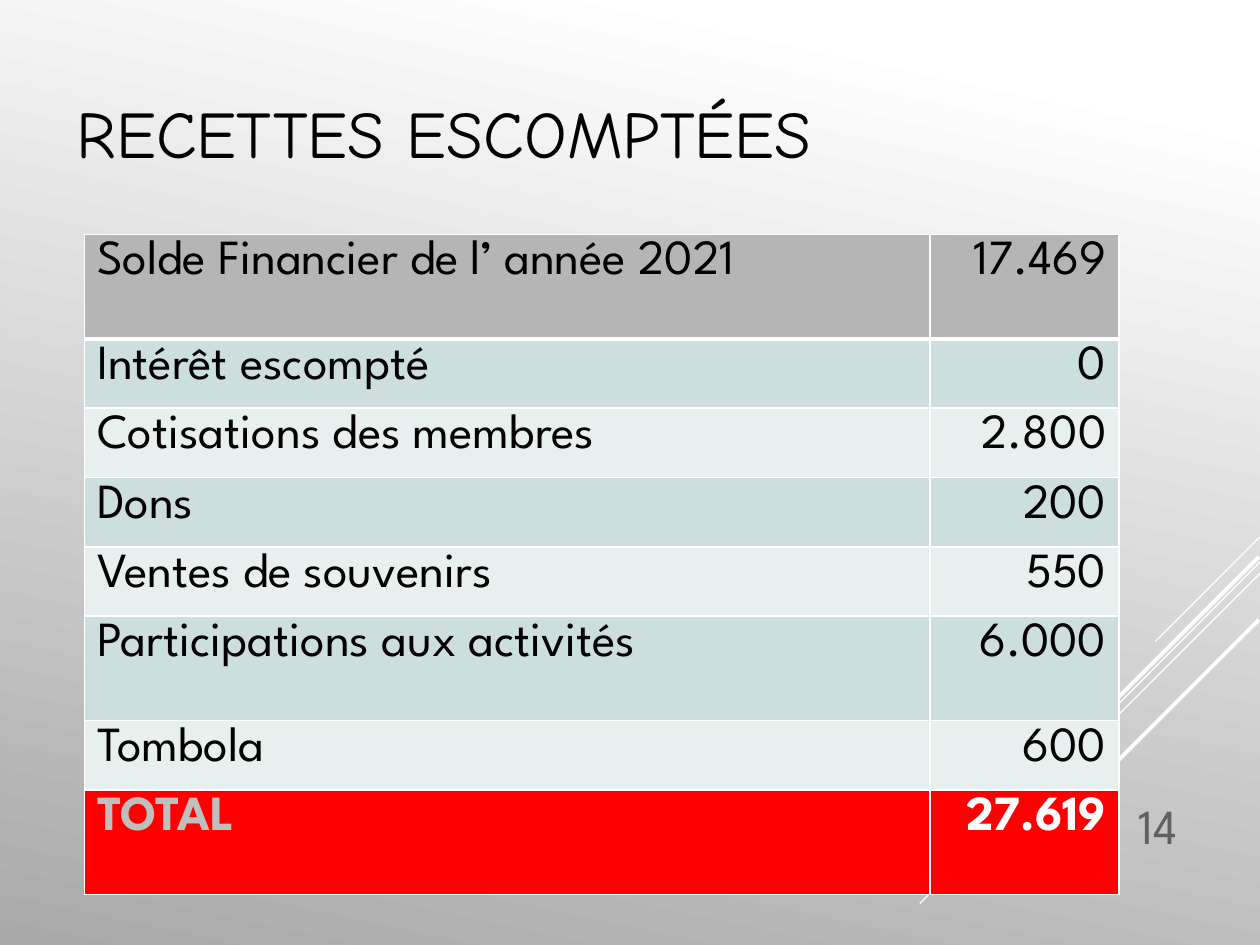
from lxml import etree
from pptx import Presentation
from pptx.dml.color import RGBColor
from pptx.enum.shapes import MSO_CONNECTOR
from pptx.enum.text import MSO_ANCHOR, PP_ALIGN
from pptx.oxml.ns import qn
from pptx.util import Inches, Pt

LINE = MSO_CONNECTOR.STRAIGHT
MIDDLE, BOTTOM = MSO_ANCHOR.MIDDLE, MSO_ANCHOR.BOTTOM
LEFT, RIGHT = PP_ALIGN.LEFT, PP_ALIGN.RIGHT

WHITE = RGBColor(0xFF, 0xFF, 0xFF)
BLACK = RGBColor(0x00, 0x00, 0x00)
SHADE = RGBColor(0xA9, 0xA9, 0xA9)
GREY = RGBColor(0x60, 0x60, 0x60)
SILVER = RGBColor(0xBF, 0xBF, 0xBF)
HEAD = RGBColor(0xB5, 0xB5, 0xB5)
DARK = RGBColor(0xCC, 0xDE, 0xDE)
LIGHT = RGBColor(0xE7, 0xEF, 0xEF)
RED = RGBColor(0xFF, 0x00, 0x00)

TITLE_FONT = "Comic Neue"
BODY_FONT = "League Spartan"

RAYS = [
    (10, 4.26, 9.17, 5.09, 0.75),
    (10, 4.46, 7.3, 7.17, 0.75),
    (10, 4.55, 8.28, 6.27, 0.75),
    (9.99, 4.42, 8.42, 5.99, 2.25),
    (9.99, 4.92, 8.85, 6.06, 2.25),
]
ROWS = [
    ("Solde Financier de l’ année 2021", "17.469"),
    ("Intérêt escompté", "0"),
    ("Cotisations des membres", "2.800"),
    ("Dons", "200"),
    ("Ventes de souvenirs", "550"),
    ("Participations aux activités", "6.000"),
    ("Tombola", "600"),
    ("TOTAL", "27.619"),
]
WIDTHS = [6.71, 1.5]
TALL, SHORT = 0.83, 0.55
TALL_ROWS = (0, 5, 7)


def style(para, font, size, color, align=LEFT, bold=False):
    """Format the paragraph and its runs."""
    para.alignment = align
    for run in para.runs:
        run.font.name = font
        run.font.size = Pt(size)
        run.font.bold = bold
        run.font.color.rgb = color


def add_back(slide):
    """Fill the background with a white to grey gradient."""
    fill = slide.background.fill
    fill.gradient()
    fill.gradient_angle = 258
    for stop, place, color in zip(fill.gradient_stops, (0.1, 1), (WHITE, SHADE)):
        stop.position = place
        stop.color.rgb = color


def add_rays(slide):
    """Draw the slanted white lines in the corner."""
    for x1, y1, x2, y2, width in RAYS:
        ray = slide.shapes.add_connector(
            LINE, Inches(x1), Inches(y1), Inches(x2), Inches(y2))
        ray.line.color.rgb = WHITE
        ray.line.width = Pt(width)
        etree.SubElement(ray._element.spPr, qn("a:effectLst"))


def add_title(slide, left, top, width, height):
    """Place and format the title."""
    title = slide.shapes.title
    title.left, title.top = Inches(left), Inches(top)
    title.width, title.height = Inches(width), Inches(height)
    frame = title.text_frame
    frame.text = "RECETTES ESCOMPTÉES"
    frame.vertical_anchor = MIDDLE
    style(frame.paragraphs[0], TITLE_FONT, 38, BLACK)


def add_edges(cell, low):
    """Draw white cell borders, with the given width at the bottom."""
    props = cell._tc.get_or_add_tcPr()
    for spot, (side, width) in enumerate(
            [("L", 1), ("R", 1), ("T", 1), ("B", low)]):
        edge = etree.Element(qn(f"a:ln{side}"), w=str(Pt(width)))
        fill = etree.SubElement(edge, qn("a:solidFill"))
        etree.SubElement(fill, qn("a:srgbClr"), val=str(WHITE))
        props.insert(spot, edge)


def add_sums(slide, left, top):
    """Build the table of expected income."""
    heights = [TALL if i in TALL_ROWS else SHORT for i in range(len(ROWS))]
    table = slide.shapes.add_table(
        len(ROWS), len(WIDTHS), Inches(left), Inches(top),
        Inches(sum(WIDTHS)), Inches(sum(heights))).table
    for col, width in zip(table.columns, WIDTHS):
        col.width = Inches(width)
    last = len(ROWS) - 1
    fills = [HEAD] + [DARK if i % 2 else LIGHT for i in range(1, last)] + [RED]
    for i, texts in enumerate(ROWS):
        table.rows[i].height = Inches(heights[i])
        total = i == last
        inks = (SILVER, WHITE) if total else (BLACK, BLACK)
        for j, (text, ink, align) in enumerate(zip(texts, inks, (LEFT, RIGHT))):
            cell = table.cell(i, j)
            cell.text_frame.text = text
            style(cell.text_frame.paragraphs[0], BODY_FONT, 28, ink, align, total)
            cell.fill.solid()
            cell.fill.fore_color.rgb = fills[i]
            add_edges(cell, 3 if i == 0 else 1)


def add_number(slide, left, top, width, height):
    """Place the page number."""
    box = slide.shapes.add_textbox(
        Inches(left), Inches(top), Inches(width), Inches(height))
    frame = box.text_frame
    frame.word_wrap = True
    frame.vertical_anchor = BOTTOM
    frame.text = "14"
    style(frame.paragraphs[0], BODY_FONT, 28, GREY, RIGHT)


def main():
    """Build and save the slide."""
    deck = Presentation()
    deck.slide_width, deck.slide_height = Inches(10), Inches(7.5)
    slide = deck.slides.add_slide(deck.slide_layouts[5])
    add_back(slide)
    add_rays(slide)
    add_title(slide, 0.51, 0.21, 7.17, 1.67)
    add_sums(slide, 0.67, 1.86)
    add_number(slide, 8.5, 6.1, 0.94, 0.73)
    deck.save("out.pptx")


if __name__ == "__main__":
    main()
